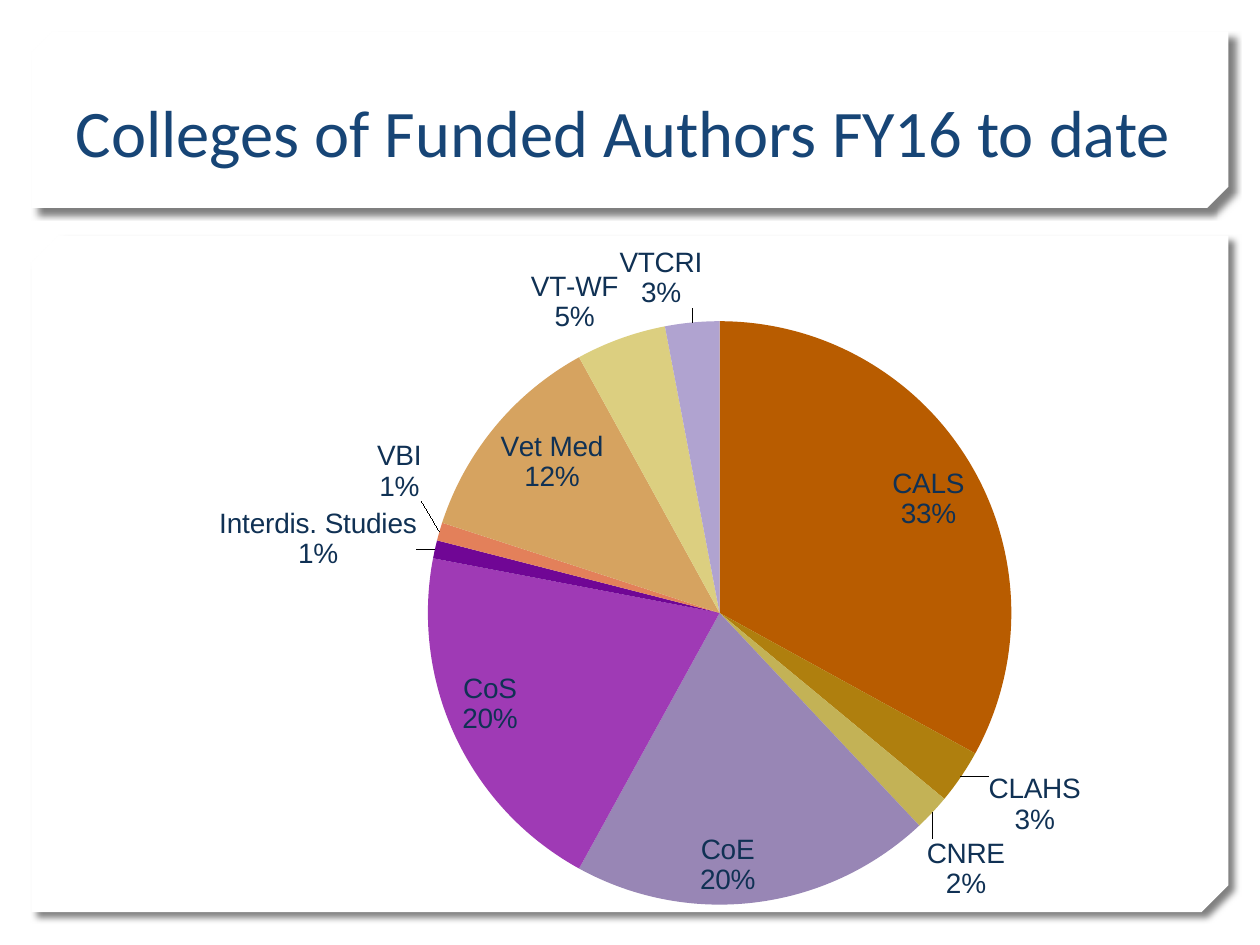
from lxml import etree
from pptx import Presentation
from pptx.chart.data import CategoryChartData
from pptx.dml.color import RGBColor
from pptx.enum.chart import XL_CHART_TYPE, XL_LABEL_POSITION
from pptx.enum.shapes import MSO_SHAPE
from pptx.enum.text import MSO_ANCHOR, MSO_AUTO_SIZE, PP_ALIGN
from pptx.oxml import parse_xml
from pptx.oxml.ns import nsdecls, qn
from pptx.util import Pt

PIE = XL_CHART_TYPE.PIE
INSIDE = XL_LABEL_POSITION.INSIDE_END
OUTSIDE = XL_LABEL_POSITION.OUTSIDE_END
SNIPPED = MSO_SHAPE.SNIP_2_DIAG_RECTANGLE
BOTTOM = MSO_ANCHOR.BOTTOM
LEFT = PP_ALIGN.LEFT
NO_FIT = MSO_AUTO_SIZE.NONE

COLLEGES = [
    ("CALS", 33, "B85C00", INSIDE, None),
    ("CLAHS", 3, "AF7F0E", OUTSIDE, (0.02, -0.01)),
    ("CNRE", 2, "C3B256", OUTSIDE, (-0.01, 0.03)),
    ("CoE", 20, "9886B5", INSIDE, None),
    ("CoS", 20, "9F3AB5", INSIDE, None),
    ("Interdis. Studies", 1, "700695", OUTSIDE, (-0.01, 0.03)),
    ("VBI", 1, "E3805A", OUTSIDE, (-0.01, -0.04)),
    ("Vet Med", 12, "D6A360", INSIDE, None),
    ("VT-WF", 5, "DCCF80", OUTSIDE, None),
    ("VTCRI", 3, "B0A3D0", OUTSIDE, (0.01, -0.01)),
]
PLOT_AREA = {"x": 0.29, "y": 0.12, "w": 0.54, "h": 0.83}


def rgb(value):
    return RGBColor.from_string(value)


def apply(target, values):
    for name, value in values.items():
        setattr(target, name, value)


def manual_layout(values, inner=False):
    layout = parse_xml(f"<c:layout {nsdecls('c')}><c:manualLayout/></c:layout>")
    manual = layout[0]
    if inner:
        etree.SubElement(manual, qn("c:layoutTarget"), val="inner")
        for axis in "xy":
            etree.SubElement(manual, qn(f"c:{axis}Mode"), val="edge")
    for name, value in values.items():
        etree.SubElement(manual, qn(f"c:{name}"), val=str(value))
    return layout


class Deck:
    title_font = {"name": "Calibri", "size": Pt(38), "bold": False}
    title_color = "174576"
    chart_font = {"name": "Arial", "size": Pt(16), "bold": False}
    chart_color = "103154"
    panel_fill = "FFFFFF"

    def __init__(self, prs):
        self.s = prs.slides.add_slide(prs.slide_layouts[5])

    def panel(self, x, y, w, h, snip):
        sp = self.s.shapes.add_shape(SNIPPED, Pt(x), Pt(y), Pt(w), Pt(h))
        sp.adjustments[0], sp.adjustments[1] = 0, snip
        sp.fill.solid()
        sp.fill.fore_color.rgb = rgb(self.panel_fill)
        sp.line.fill.background()
        sp.shadow.inherit = False
        props = sp._element.spPr
        props.find(qn("a:xfrm")).set("flipV", "1")
        effects = props.find(qn("a:effectLst"))
        shadow = etree.SubElement(
            effects, qn("a:outerShdw"), blurRad=str(Pt(4)), dist=str(Pt(5)),
            dir="2700000", algn="tl", rotWithShape="0")
        color = etree.SubElement(shadow, qn("a:srgbClr"), val="000000")
        etree.SubElement(color, qn("a:alpha"), val="50000")

    def title(self, text, x, y, w, h):
        sp = self.s.shapes.title
        apply(sp, {"left": Pt(x), "top": Pt(y), "width": Pt(w), "height": Pt(h)})
        tf = sp.text_frame
        apply(tf, {"vertical_anchor": BOTTOM, "word_wrap": True,
                   "auto_size": NO_FIT})
        p = tf.paragraphs[0]
        p.alignment = LEFT
        r = p.add_run()
        r.text = text
        apply(r.font, self.title_font)
        r.font.color.rgb = rgb(self.title_color)
        self.s.shapes._spTree.append(sp._element)

    def pie(self, rows, x, y, w, h):
        data = CategoryChartData()
        data.categories = [row[0] for row in rows]
        data.add_series("Series 1", [row[1] for row in rows])
        chart = self.s.shapes.add_chart(
            PIE, Pt(x), Pt(y), Pt(w), Pt(h), data).chart
        apply(chart, {"has_legend": False, "has_title": False})
        apply(chart.font, self.chart_font)
        chart.font.color.rgb = rgb(self.chart_color)
        plot = chart.plots[0]
        plot.vary_by_categories = True
        series = plot.series[0]
        apply(series.data_labels, {
            "show_category_name": True, "show_percentage": True,
            "show_value": False, "position": OUTSIDE})
        for i, (_, _, color, position, offset) in enumerate(rows):
            point = series.points[i]
            point.format.fill.solid()
            point.format.fill.fore_color.rgb = rgb(color)
            point.format.line.fill.background()
            point.data_label.position = position
            label = series._element.findall(".//" + qn("c:dLbl"))[-1]
            for tag, shown in (("showVal", "0"), ("showCatName", "1"),
                               ("showPercent", "1")):
                label.find(qn(f"c:{tag}")).set("val", shown)
            separator = etree.SubElement(label, qn("c:separator"))
            separator.text = "\n"
            if offset:
                label.insert(1, manual_layout(dict(zip("xy", offset))))
        labels = series._element.find(qn("c:dLbls"))
        for old in labels.findall(qn("c:showLeaderLines")):
            labels.remove(old)
        etree.SubElement(labels, qn("c:separator")).text = "\n"
        etree.SubElement(labels, qn("c:showLeaderLines"), val="1")
        area = plot._element.getparent()
        for old in area.findall(qn("c:layout")):
            area.remove(old)
        area.insert(0, manual_layout(PLOT_AREA, inner=True))


def main():
    prs = Presentation()
    apply(prs, {"slide_width": Pt(720), "slide_height": Pt(540)})
    deck = Deck(prs)
    deck.panel(18, 134.64, 684, 386.64, 0.04)
    deck.panel(18, 18, 684, 100.8, 0.12)
    deck.title("Colleges of Funded Authors FY16 to date", 36, 11.52, 660.96, 90)
    deck.pie(COLLEGES, 64.08, 135.36, 619.92, 401.76)
    prs.save("out.pptx")


if __name__ == "__main__":
    main()
